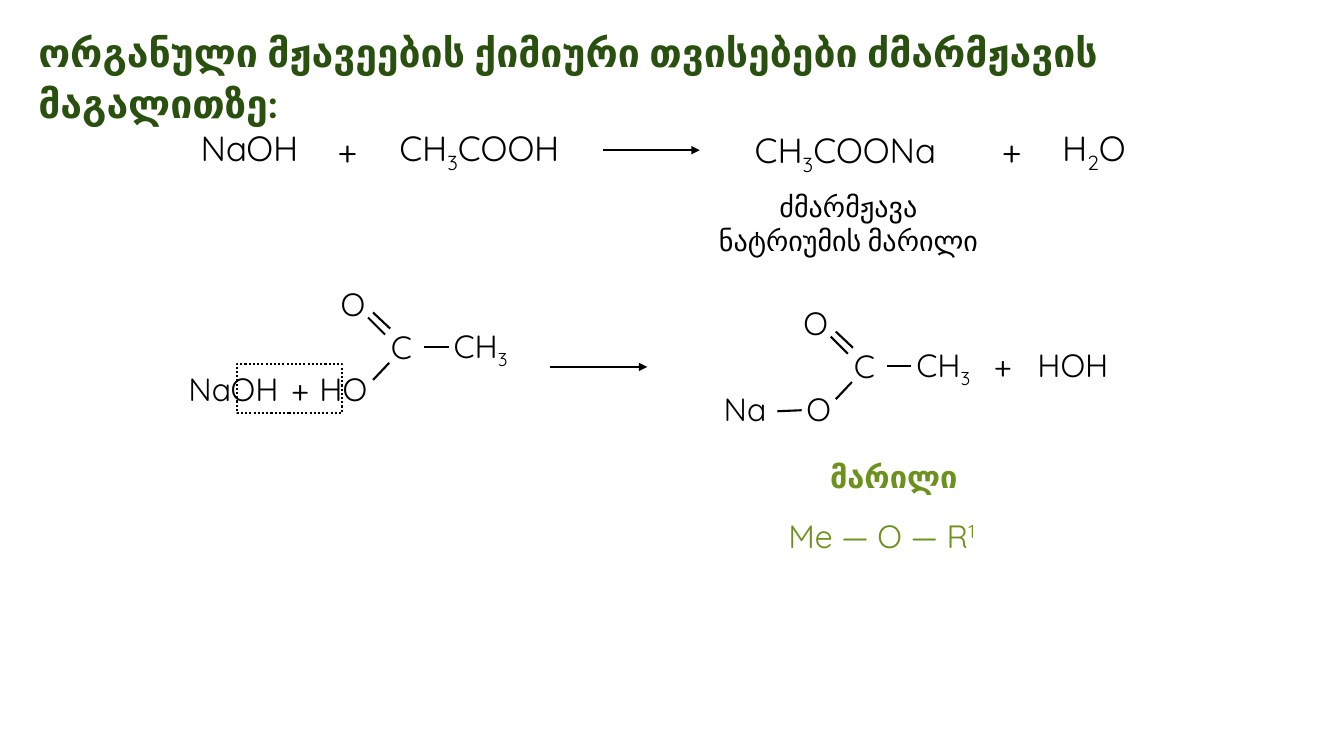
import pptx
import pptx.util
import pptx.dml.color
import pptx.enum.dml
import pptx.enum.shapes
import pptx.enum.text
import pptx.oxml
import pptx.oxml.ns

Inches = pptx.util.Inches
Pt = pptx.util.Pt
Color = pptx.dml.color.RGBColor
Align = pptx.enum.text.PP_ALIGN
Fit = pptx.enum.text.MSO_AUTO_SIZE
BLACK = Color(0x00, 0x00, 0x00)
WHITE = Color(0xFF, 0xFF, 0xFF)
DARK = Color(0x2A, 0x50, 0x10)
GREEN = Color(0x6C, 0x92, 0x1D)


class Board:
    def __init__(self, deck):
        self.slide = deck.slides.add_slide(deck.slide_layouts[5])
        self.shapes = self.slide.shapes
        self.font = {"name": "Quicksand", "size": Pt(23), "bold": False}

    def label(self, shape, text, color, align, wrap, base=-25, **style):
        frame = shape.text_frame
        look = {"word_wrap": wrap, "auto_size": Fit.SHAPE_TO_FIT_TEXT,
                "vertical_anchor": pptx.enum.text.MSO_ANCHOR.TOP}
        for key, value in look.items():
            setattr(frame, key, value)
        para = frame.paragraphs[0]
        para.alignment = align
        for pos, part in enumerate(text.split("|")):
            if not part:
                continue
            run = para.add_run()
            run.text = part
            for key, value in {**self.font, **style}.items():
                setattr(run.font, key, value)
            run.font.color.rgb = color
            if pos % 2:
                run._r.get_or_add_rPr().set("baseline", str(base * 1000))
        return para

    def place(self, shape, box):
        for key, value in zip(("left", "top", "width", "height"), box):
            setattr(shape, key, Inches(value))

    def title(self, text, box):
        shape = self.shapes.title
        self.place(shape, box)
        para = self.label(shape, text, DARK, Align.LEFT, True,
                          name="Lato", size=Pt(28), bold=True)
        para.line_spacing = 1.07
        para.space_before = Pt(0)
        para.space_after = Pt(8)

    def text(self, text, box, color=BLACK, align=Align.LEFT, wrap=False, **style):
        shape = self.shapes.add_textbox(*map(Inches, box))
        self.label(shape, text, color, align, wrap, **style)

    def line(self, start, end, width=1.5, arrow=False):
        kind = pptx.enum.shapes.MSO_CONNECTOR.STRAIGHT
        line = self.shapes.add_connector(kind, *map(Inches, (*start, *end)))
        line.line.color.rgb = BLACK
        line.line.width = Pt(width)
        if arrow:
            tail = pptx.oxml.parse_xml(
                f'<a:tailEnd {pptx.oxml.ns.nsdecls("a")} type="triangle"/>')
            line.line._get_or_add_ln().append(tail)
        line._element.spPr.append(pptx.oxml.parse_xml(
            f'<a:effectLst {pptx.oxml.ns.nsdecls("a")}/>'))

    def frame(self, box):
        kind = pptx.enum.shapes.MSO_SHAPE.RECTANGLE
        shape = self.shapes.add_shape(kind, *map(Inches, box))
        shape.shadow.inherit = False
        shape.fill.solid()
        shape.fill.fore_color.rgb = WHITE
        shape.line.color.rgb = BLACK
        shape.line.width = Pt(1.5)
        shape.line.dash_style = pptx.enum.dml.MSO_LINE.ROUND_DOT

    def acid(self, x, y):
        for text, dx, dy, width in (("C", 0, 0, 0.46), ("CH|3", 0.62, -0.01, 0.81),
                                    ("O", -0.5, -0.43, 0.48)):
            self.text(text, (x + dx, y + dy, width, 0.49))
        for ax, ay, bx, by in ((0.67, 0.24, 0.43, 0.24), (0.08, 0.4, -0.08, 0.57),
                               (0.04, 0.12, -0.13, -0.05), (0.09, 0.06, -0.08, -0.1)):
            self.line((x + ax, y + ay), (x + bx, y + by))


def main():
    deck = pptx.Presentation()
    deck.slide_width = Inches(13.33)
    deck.slide_height = Inches(7.5)
    board = Board(deck)
    board.title("ორგანული მჟავეების ქიმიური თვისებები ძმარმჟავის მაგალითზე:",
                (0.28, 0.2, 12.59, 0.61))

    for text, left, top, width in (
            ("NaOH", 1.85, 1.21, 1.25), ("+", 3.24, 1.23, 0.41),
            ("CH|3|COOH", 3.76, 1.21, 1.99), ("CH|3|COONa", 7.26, 1.23, 2.25),
            ("+", 9.83, 1.23, 0.41), ("H|2|O", 10.41, 1.21, 0.88)):
        board.text(text, (left, top, width, 0.52), align=Align.CENTER, size=Pt(25))
    board.line((5.98, 1.49), (6.94, 1.49), 1, True)
    board.text("ძმარმჟავა ნატრიუმის მარილი", (7, 1.83, 2.83, 0.77),
               align=Align.CENTER, wrap=True, name="Karla", size=Pt(20))

    board.frame((2.35, 3.61, 1.04, 0.49))
    board.acid(3.78, 3.2)
    board.acid(8.37, 3.39)
    for text, left, top, width in (
            ("NaOH", 1.77, 3.61, 1.16), ("+", 2.79, 3.61, 0.49),
            ("HO", 3.07, 3.61, 0.7), ("Na", 7.08, 3.81, 0.66),
            ("O", 7.9, 3.81, 0.48), ("+", 9.76, 3.38, 0.49),
            ("HOH", 10.19, 3.38, 0.92)):
        board.text(text, (left, top, width, 0.49))
    board.line((5.45, 3.64), (6.42, 3.64), 1, True)
    board.line((7.95, 4.07), (7.71, 4.08))

    board.text("მარილი", (7.53, 4.49, 2.67, 0.47), GREEN, Align.CENTER, True,
               name="Lato", size=Pt(22), bold=True)
    board.text("Me ― O ― R|1", (7.72, 5.07, 2.15, 0.49), GREEN, base=30)
    deck.save("out.pptx")


if __name__ == "__main__":
    main()
